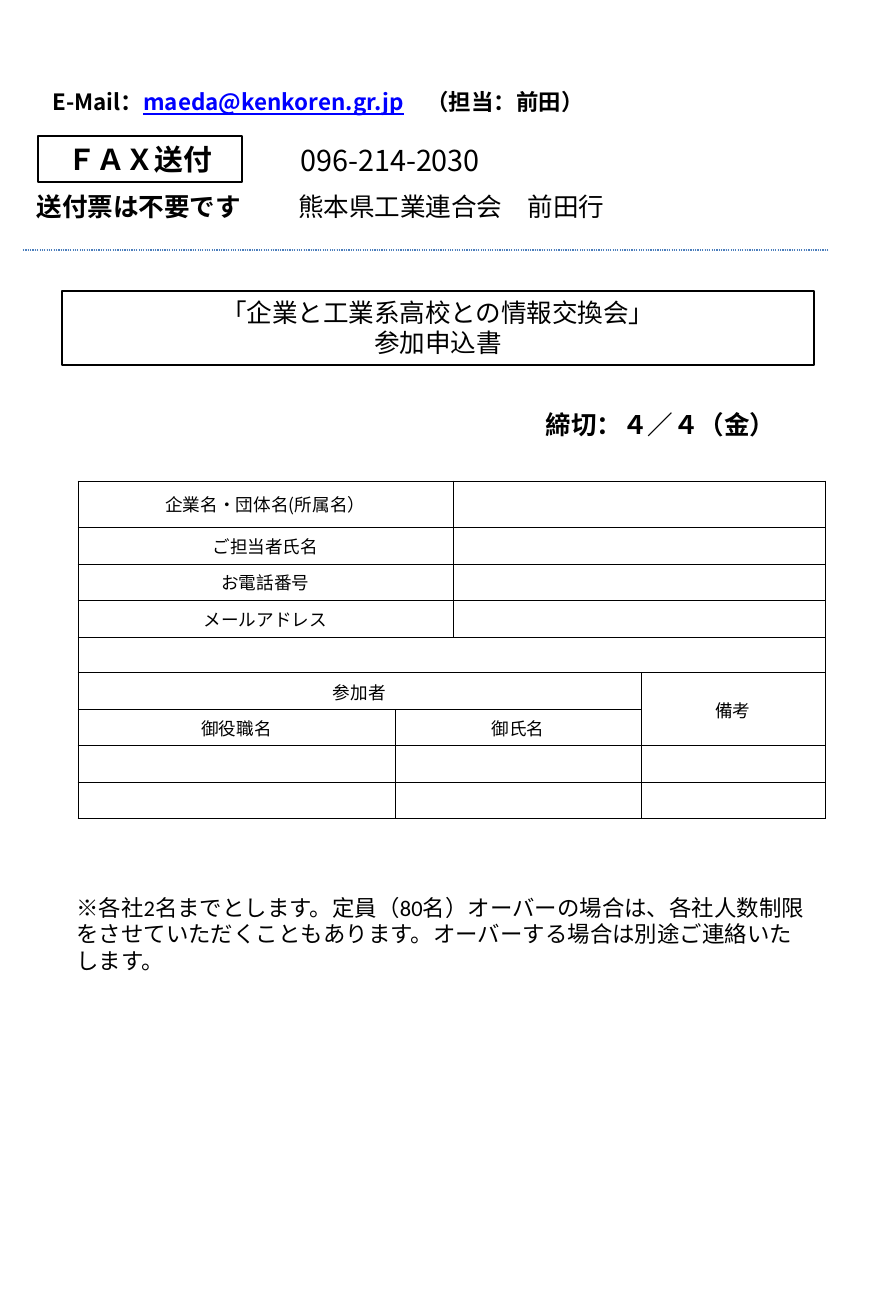
from dataclasses import dataclass

import pptx
import pptx.dml.color
import pptx.enum.dml
import pptx.enum.shapes
import pptx.enum.text
import pptx.oxml
import pptx.oxml.ns
import pptx.util

EMU_PER_PX = 7937.5
COLORS = {"ink": "000000", "link": "0000FF", "divider": "4B7EBC"}
GOTHIC, CALIBRI = "Noto Sans CJK JP", "Calibri"
LEFT, CENTER = pptx.enum.text.PP_ALIGN.LEFT, pptx.enum.text.PP_ALIGN.CENTER
MIDDLE, TOP = pptx.enum.text.MSO_ANCHOR.MIDDLE, pptx.enum.text.MSO_ANCHOR.TOP


@dataclass
class Run:
    text: str
    link: bool = False


@dataclass
class Block:
    left: int
    top: int
    width: int
    height: int
    paragraphs: list[list[Run]]
    size: int = 16
    bold: bool = False
    align: int = LEFT
    anchor: int = MIDDLE
    font: str = GOTHIC
    framed: bool = False


@dataclass
class Field:
    """A table cell with its span."""
    row: int
    col: int
    text: str = ""
    rows: int = 1
    cols: int = 1


FORM_TITLE = Block(62, 291, 752, 74, [[Run("「企業と工業系高校との情報交換会」")],
                                      [Run("参加申込書")]], align=CENTER)
BLOCKS = [
    Block(41, 82, 715, 39, [[Run("E-Mail："), Run("maeda@kenkoren.gr.jp", link=True),
                             Run("　（担当：前田）")]], size=14, bold=True),
    Block(38, 136, 204, 46, [[Run("ＦＡＸ送付")]], size=18, bold=True,
          align=CENTER, framed=True),
    Block(289, 137, 331, 46, [[Run("096-214-2030")]], size=18),
    Block(9, 185, 260, 43, [[Run("送付票は不要です")]], bold=True, align=CENTER),
    Block(287, 185, 499, 43, [[Run("熊本県工業連合会　前田行")]]),
    Block(506, 403, 309, 43, [[Run("締切：４／４（金）")]], bold=True, align=CENTER),
    Block(65, 888, 755, 93, [[Run(
        "※各社2名までとします。定員（80名）オーバーの場合は、各社人数制限を"
        "させていただくこともあります。オーバーする場合は別途ご連絡いたします。")]],
        size=14, anchor=TOP, font=CALIBRI),
]

COLUMN_WIDTHS = [317, 58, 188, 184]
ROW_HEIGHTS = [46] + [36 + row % 2 for row in range(1, 9)]
CONTACT_LABELS = ["企業名・団体名(所属名）", "ご担当者氏名", "お電話番号", "メールアドレス"]
FIELDS = [
    *(Field(row, 0, label, cols=2) for row, label in enumerate(CONTACT_LABELS)),
    *(Field(row, 2, cols=2) for row in range(len(CONTACT_LABELS))),
    Field(4, 0, cols=4),
    Field(5, 0, "参加者", cols=3),
    Field(5, 3, "備考", rows=2),
    Field(6, 0, "御役職名"),
    Field(6, 1, "御氏名", cols=2),
    *(Field(row, 1, cols=2) for row in (7, 8)),
]


def px(length: int) -> pptx.util.Emu:
    return pptx.util.Emu(int(length * EMU_PER_PX))


def color(name: str) -> pptx.dml.color.RGBColor:
    return pptx.dml.color.RGBColor.from_string(COLORS[name])


def write(frame, paragraphs: list[list[Run]], *, size: int, bold: bool = False,
          align: int = LEFT, font: str = GOTHIC) -> None:
    for index, runs in enumerate(paragraphs):
        paragraph = frame.paragraphs[0] if index == 0 else frame.add_paragraph()
        paragraph.alignment = align
        for part in runs:
            run = paragraph.add_run()
            run.text = part.text
            run.font.size = pptx.util.Pt(size)
            run.font.bold = bold
            run.font.name = font
            run.font.color.rgb = color("link" if part.link else "ink")
            if part.link:
                run.font.underline = True
            if font == GOTHIC:
                east_asian = pptx.oxml.parse_xml(
                    f'<a:ea {pptx.oxml.ns.nsdecls("a")} typeface="{font}"/>')
                run.font._element.find(pptx.oxml.ns.qn("a:latin")).addnext(east_asian)


def outline(shape) -> None:
    shape.fill.background()
    shape.line.color.rgb = color("ink")
    shape.line.width = pptx.util.Pt(0.75)


def fill_block(shape, block: Block) -> None:
    frame = shape.text_frame
    frame.word_wrap = True
    frame.auto_size = pptx.enum.text.MSO_AUTO_SIZE.NONE
    frame.vertical_anchor = block.anchor
    write(frame, block.paragraphs, size=block.size, bold=block.bold,
          align=block.align, font=block.font)


def add_title(slide, block: Block) -> None:
    title = slide.shapes.title
    title.left, title.top = px(block.left), px(block.top)
    title.width, title.height = px(block.width), px(block.height)
    outline(title)
    fill_block(title, block)
    for paragraph in title.text_frame.paragraphs:
        paragraph.line_spacing = pptx.util.Pt(18.75)


def add_block(slide, block: Block) -> None:
    place = px(block.left), px(block.top), px(block.width), px(block.height)
    if block.framed:
        shape = slide.shapes.add_shape(pptx.enum.shapes.MSO_SHAPE.RECTANGLE, *place)
        shape.shadow.inherit = False
        outline(shape)
    else:
        shape = slide.shapes.add_textbox(*place)
    fill_block(shape, block)


def add_divider(slide, left: int, right: int, y: int) -> None:
    divider = slide.shapes.add_connector(
        pptx.enum.shapes.MSO_CONNECTOR.STRAIGHT, px(left), px(y), px(right), px(y))
    divider.line.color.rgb = color("divider")
    divider.line.width = pptx.util.Pt(0.75)
    divider.line.dash_style = pptx.enum.dml.MSO_LINE.ROUND_DOT
    divider._element.spPr.append(
        pptx.oxml.parse_xml(f'<a:effectLst {pptx.oxml.ns.nsdecls("a")}/>'))


def add_borders(cell) -> None:
    properties = cell._tc.get_or_add_tcPr()
    for index, side in enumerate(("lnL", "lnR", "lnT", "lnB")):
        properties.insert(index, pptx.oxml.parse_xml(
            f'<a:{side} {pptx.oxml.ns.nsdecls("a")} w="{pptx.util.Pt(0.5)}"><a:solidFill>'
            f'<a:srgbClr val="{COLORS["ink"]}"/></a:solidFill></a:{side}>'))


def add_form(slide, left: int, top: int) -> None:
    form = slide.shapes.add_table(
        len(ROW_HEIGHTS), len(COLUMN_WIDTHS), px(left), px(top),
        px(sum(COLUMN_WIDTHS)), px(sum(ROW_HEIGHTS))).table
    form.first_row = form.horz_banding = False
    for column, width in zip(form.columns, COLUMN_WIDTHS):
        column.width = px(width)
    for row, height in zip(form.rows, ROW_HEIGHTS):
        row.height = px(height)
    for cell in form.iter_cells():
        cell.margin_left = cell.margin_right = cell.margin_top = cell.margin_bottom = 0
        cell.vertical_anchor = MIDDLE
        cell.fill.background()
        add_borders(cell)
    for field in FIELDS:
        cell = form.cell(field.row, field.col)
        if field.rows * field.cols > 1:
            cell.merge(form.cell(field.row + field.rows - 1, field.col + field.cols - 1))
        if field.text:
            write(cell.text_frame, [[Run(field.text)]], size=11, align=CENTER)


def main() -> None:
    deck = pptx.Presentation()
    deck.slide_width, deck.slide_height = px(885), px(1316)
    slide = deck.slides.add_slide(deck.slide_layouts[5])

    # Contact details
    for block in BLOCKS:
        add_block(slide, block)
    add_divider(slide, 23, 829, 250)

    # Application form
    add_title(slide, FORM_TITLE)
    add_form(slide, 78, 481)

    deck.save("out.pptx")


if __name__ == "__main__":
    main()
